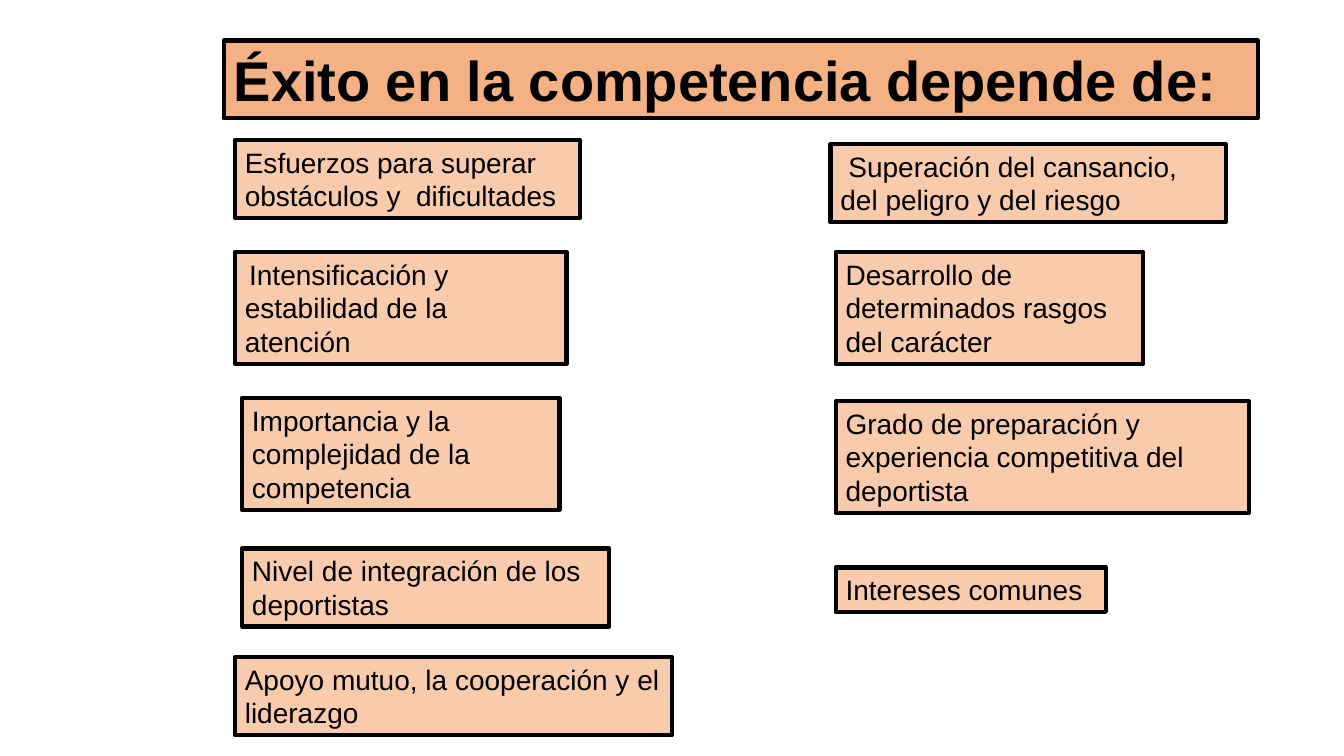
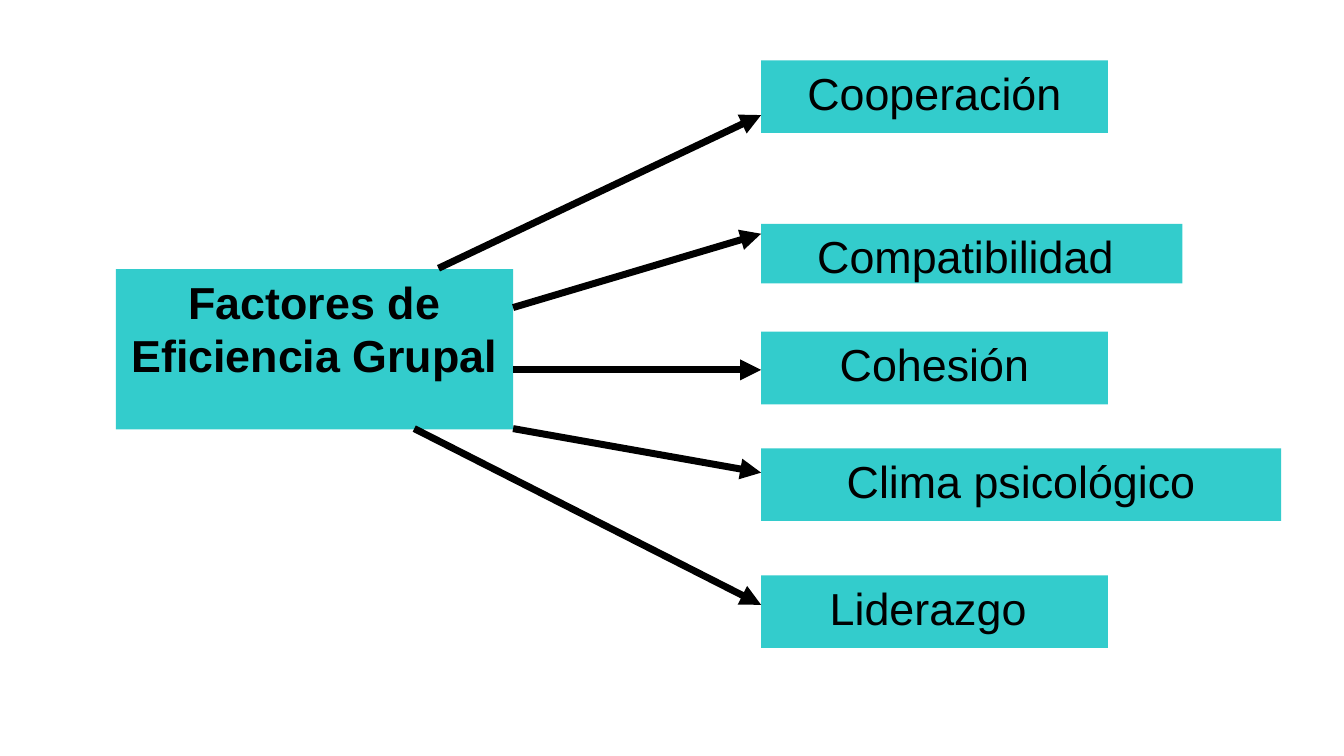
import pptx
import pptx.util
import pptx.dml.color
import pptx.enum.shapes
import pptx.enum.text
import pptx.oxml.ns
from lxml import etree

Cm, Pt = pptx.util.Cm, pptx.util.Pt
RGB = pptx.dml.color.RGBColor
ALIGN = pptx.enum.text.PP_ALIGN

# Shared colours and formats
BLACK = RGB(0x00, 0x00, 0x00)
ORANGE = RGB(0xF4, 0xB1, 0x83)
PEACH = RGB(0xF8, 0xCB, 0xAD)
TEAL = RGB(0x33, 0xCC, 0xCC)

FRAME = {
    "word_wrap": True,
    "auto_size": pptx.enum.text.MSO_AUTO_SIZE.NONE,
    "vertical_anchor": pptx.enum.text.MSO_ANCHOR.TOP,
    "margin_left": Cm(0.25), "margin_right": Cm(0.25),
    "margin_top": Cm(0.13), "margin_bottom": Cm(0.13),
}
HEAD = {"name": "Arial", "size": Pt(40), "bold": True}
ITEM = {"name": "Arial", "size": Pt(20), "bold": False}
HUB = {"name": "Arial", "size": Pt(32), "bold": True}
FACTOR = {"name": "Arial", "size": Pt(32), "bold": False}

# Success slide: left, top, width, lines, first-line indent, text
SUCCESS = "Éxito en la competencia depende de:"
ITEMS = [
    (5.92, 3.53, 8.69, 2, 0, "Esfuerzos para superar obstáculos y  dificultades"),
    (20.93, 3.63, 9.96, 2, 0.2, "Superación del cansancio, del peligro y del riesgo"),
    (5.92, 6.35, 8.36, 3, 0.11, "Intensificación y estabilidad de la atención"),
    (21.06, 6.35, 7.75, 3, 0, "Desarrollo de determinados rasgos del carácter"),
    (6.1, 10.03, 8, 3, 0, "Importancia y la complejidad de la competencia"),
    (21.06, 10.11, 10.41, 3, 0,
     "Grado de preparación y experiencia competitiva del deportista"),
    (6.1, 13.82, 9.25, 2, 0, "Nivel de integración de los deportistas"),
    (21.06, 14.3, 6.81, 1, 0, "Intereses comunes"),
    (5.92, 16.56, 11.02, 2, 0, "Apoyo mutuo, la cooperación y el liderazgo"),
]
PAD, LINE = 0.27, 0.85

# Factor slide: top, width, height, text, arrow start, arrow end height
GROUP = "Factores de Eficiencia Grupal"
COLUMN = 19.18
FACTORS = [
    (1.52, 8.74, 1.83, "Cooperación", (11.05, 6.76), 2.9),
    (5.64, 10.62, 1.5, "Compatibilidad ", (12.93, 7.75), 5.89),
    (8.36, 8.74, 1.83, "Cohesión", (12.93, 9.32), 9.32),
    (11.3, 13.11, 1.83, "Clima psicológico", (12.93, 10.8), 11.91),
    (14.5, 8.74, 1.83, "Liderazgo ", (10.44, 10.8), 15.24),
]


def apply(target, values):
    for name, value in values.items():
        setattr(target, name, value)


def style(shape, text, fill, font, edge=0, align=ALIGN.LEFT, indent=0):
    """Fill, outline and label a box or a title."""
    shape.fill.solid()
    shape.fill.fore_color.rgb = fill
    if edge:
        shape.line.color.rgb = BLACK
        shape.line.width = Pt(edge)
    else:
        shape.line.fill.background()
    frame = shape.text_frame
    apply(frame, FRAME)
    para = frame.paragraphs[0]
    para.alignment = align
    if indent:
        para._p.get_or_add_pPr().set("indent", str(Cm(indent)))
    run = para.add_run()
    run.text = text
    apply(run.font, font)
    run.font.color.rgb = BLACK


def place(shape, *box):
    apply(shape, dict(zip(("left", "top", "width", "height"), map(Cm, box))))


def add_box(slide, box, *args, **opts):
    kind = pptx.enum.shapes.MSO_SHAPE.RECTANGLE
    shape = slide.shapes.add_shape(kind, *map(Cm, box))
    shape.shadow.inherit = False
    style(shape, *args, **opts)


def add_arrow(slide, start, end):
    kind = pptx.enum.shapes.MSO_CONNECTOR.STRAIGHT
    arrow = slide.shapes.add_connector(kind, *map(Cm, start + end))
    arrow.line.color.rgb = BLACK
    arrow.line.width = Pt(5)
    qn = pptx.oxml.ns.qn
    etree.SubElement(arrow.line._get_or_add_ln(), qn("a:tailEnd"), type="triangle")
    etree.SubElement(arrow._element.spPr, qn("a:effectLst"))


def add_slide(deck):
    return deck.slides.add_slide(deck.slide_layouts[5])


def build_success(deck):
    slide = add_slide(deck)
    title = slide.shapes.title
    place(title, 5.64, 1.02, 26.06, 1.96)
    style(title, SUCCESS, ORANGE, HEAD, edge=3)
    for left, top, width, lines, indent, text in ITEMS:
        box = (left, top, width, PAD + LINE * lines)
        add_box(slide, box, text, PEACH, ITEM, edge=3, indent=indent)


def build_factors(deck):
    slide = add_slide(deck)
    hub = slide.shapes.title
    place(hub, 2.92, 6.78, 10.01, 4.04)
    style(hub, GROUP, TEAL, HUB, align=ALIGN.CENTER)
    for top, width, height, text, start, end in FACTORS:
        box = (COLUMN, top, width, height)
        add_box(slide, box, text, TEAL, FACTOR, align=ALIGN.CENTER)
        add_arrow(slide, start, (COLUMN, end))


def main():
    deck = pptx.Presentation()
    deck.slide_width, deck.slide_height = Cm(33.87), Cm(19.05)
    build_success(deck)
    build_factors(deck)
    deck.save("out.pptx")


if __name__ == "__main__":
    main()
